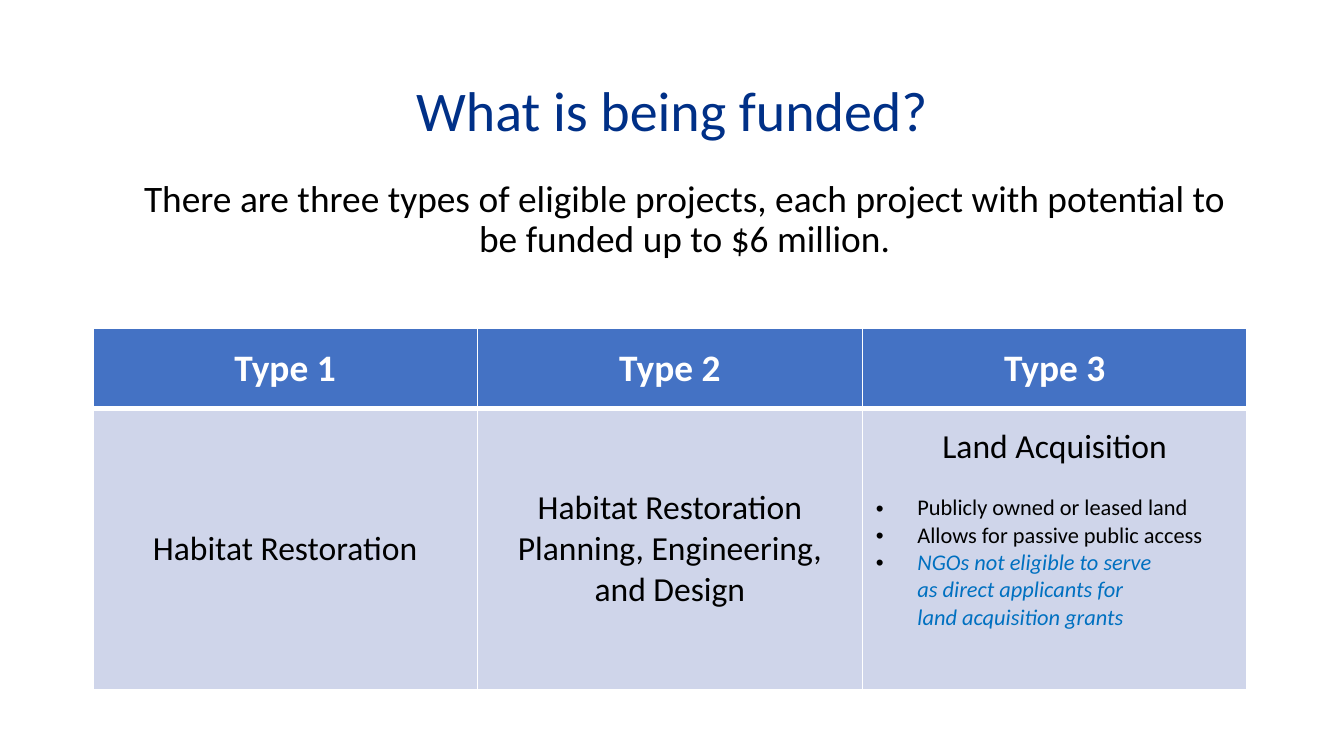
from lxml.etree import SubElement
from pptx import Presentation
from pptx.dml.color import RGBColor
from pptx.enum.text import MSO_ANCHOR, PP_ALIGN
from pptx.oxml.ns import qn
from pptx.util import Inches, Pt

WIDTH = 10
HEIGHT = WIDTH * 9 / 16
MARGIN = 0.69
CONTENT_WIDTH = WIDTH - 2 * MARGIN
TABLE_WIDTH = 8.59
ROW_HEIGHTS = (0.6, 2.09)
FONT = "Calibri"
NO_BREAK_SPACE = chr(160)
COLORS = {
    "title": "003087",
    "text": "000000",
    "header_text": "FFFFFF",
    "header_fill": "4472C4",
    "body_fill": "CFD5EA",
    "border": "FFFFFF",
    "restriction": "0070C0",
}

PROJECT_TYPES = [
    ("Type 1", "Habitat Restoration"),
    ("Type 2", "Habitat Restoration Planning, Engineering, and Design"),
    ("Type 3", "Land Acquisition"),
]
# An underscore marks a space where the line must not break
ACQUISITION_RULES = [
    ("Publicly owned or leased land", "text", False),
    ("Allows for passive public_access", "text", False),
    ("NGOs not eligible to serve as_direct applicants for land_acquisition grants",
     "restriction", True),
]


def rgb(name):
    return RGBColor.from_string(COLORS[name])


def style(paragraph, size, color, bold=False, italic=False, align=PP_ALIGN.CENTER):
    paragraph.alignment = align
    for run in paragraph.runs:
        run.font.name = FONT
        run.font.size = Pt(size)
        run.font.color.rgb = rgb(color)
        run.font.bold = bold
        run.font.italic = italic


def set_indent(paragraph, left, first_line=0):
    properties = paragraph._p.get_or_add_pPr()
    properties.set("marL", str(Inches(left)))
    properties.set("indent", str(Inches(first_line)))
    return properties


def add_bullet(paragraph):
    properties = set_indent(paragraph, 0.31, -0.31)
    bullet_color = SubElement(properties, qn("a:buClr"))
    SubElement(bullet_color, qn("a:srgbClr"), val=COLORS["text"])
    SubElement(properties, qn("a:buFont"), typeface="Arial")
    SubElement(properties, qn("a:buChar"), char="•")


def place_title(slide):
    title = slide.shapes.title
    title.left, title.top = Inches(MARGIN), Inches(0.3)
    title.width, title.height = Inches(CONTENT_WIDTH), Inches(1.09)
    frame = title.text_frame
    frame.text = "What is being funded?"
    frame.vertical_anchor = MSO_ANCHOR.MIDDLE
    frame.paragraphs[0].line_spacing = 0.9
    style(frame.paragraphs[0], 30, "title")


def add_introduction(slide):
    introduction = slide.shapes.add_textbox(
        Inches(MARGIN), Inches(1.29), Inches(CONTENT_WIDTH), Inches(0.75))
    frame = introduction.text_frame
    frame.word_wrap = True
    frame.text = ("There are three types of eligible projects, each project "
                  "with potential to be funded up to $6 million.")
    paragraph = frame.paragraphs[0]
    paragraph.line_spacing = 0.9
    set_indent(paragraph, 0.19)
    style(paragraph, 20, "text")


def add_borders(cell, top, bottom):
    properties = cell._tc.get_or_add_tcPr()
    for side, width in (("L", 1), ("R", 1), ("T", top), ("B", bottom)):
        line = SubElement(properties, qn(f"a:ln{side}"), w=str(Pt(width)))
        line_fill = SubElement(line, qn("a:solidFill"))
        SubElement(line_fill, qn("a:srgbClr"), val=COLORS["border"])


def fill_cell(cell, text, fill, size, color, bold=False):
    cell.fill.solid()
    cell.fill.fore_color.rgb = rgb(fill)
    cell.vertical_anchor = MSO_ANCHOR.MIDDLE
    cell.text_frame.text = text
    style(cell.text_frame.paragraphs[0], size, color, bold)


def add_rules(cell):
    cell.margin_bottom = Inches(0.35)
    cell.text_frame.paragraphs[0].space_after = Pt(14.6)
    for text, color, italic in ACQUISITION_RULES:
        rule = cell.text_frame.add_paragraph()
        rule.text = text.replace("_", NO_BREAK_SPACE)
        style(rule, 12, color, italic=italic, align=PP_ALIGN.LEFT)
        add_bullet(rule)


def add_project_table(slide):
    count = len(PROJECT_TYPES)
    table = slide.shapes.add_table(
        len(ROW_HEIGHTS), count, Inches(MARGIN), Inches(2.44),
        Inches(TABLE_WIDTH), Inches(sum(ROW_HEIGHTS))).table
    for row, height in zip(table.rows, ROW_HEIGHTS):
        row.height = Inches(height)
    for index, (heading, project) in enumerate(PROJECT_TYPES):
        table.columns[index].width = Inches(TABLE_WIDTH / count)
        header, body = table.cell(0, index), table.cell(1, index)
        add_borders(header, top=1, bottom=3)
        add_borders(body, top=3, bottom=1)
        fill_cell(header, heading, "header_fill", 20, "header_text", bold=True)
        fill_cell(body, project, "body_fill", 18, "text")
    add_rules(table.cell(1, count - 1))


def main():
    presentation = Presentation()
    presentation.slide_width = Inches(WIDTH)
    presentation.slide_height = Inches(HEIGHT)
    slide = presentation.slides.add_slide(presentation.slide_layouts[5])

    # Heading and introduction
    place_title(slide)
    add_introduction(slide)

    # Eligible project types
    add_project_table(slide)

    presentation.save("out.pptx")


if __name__ == "__main__":
    main()
